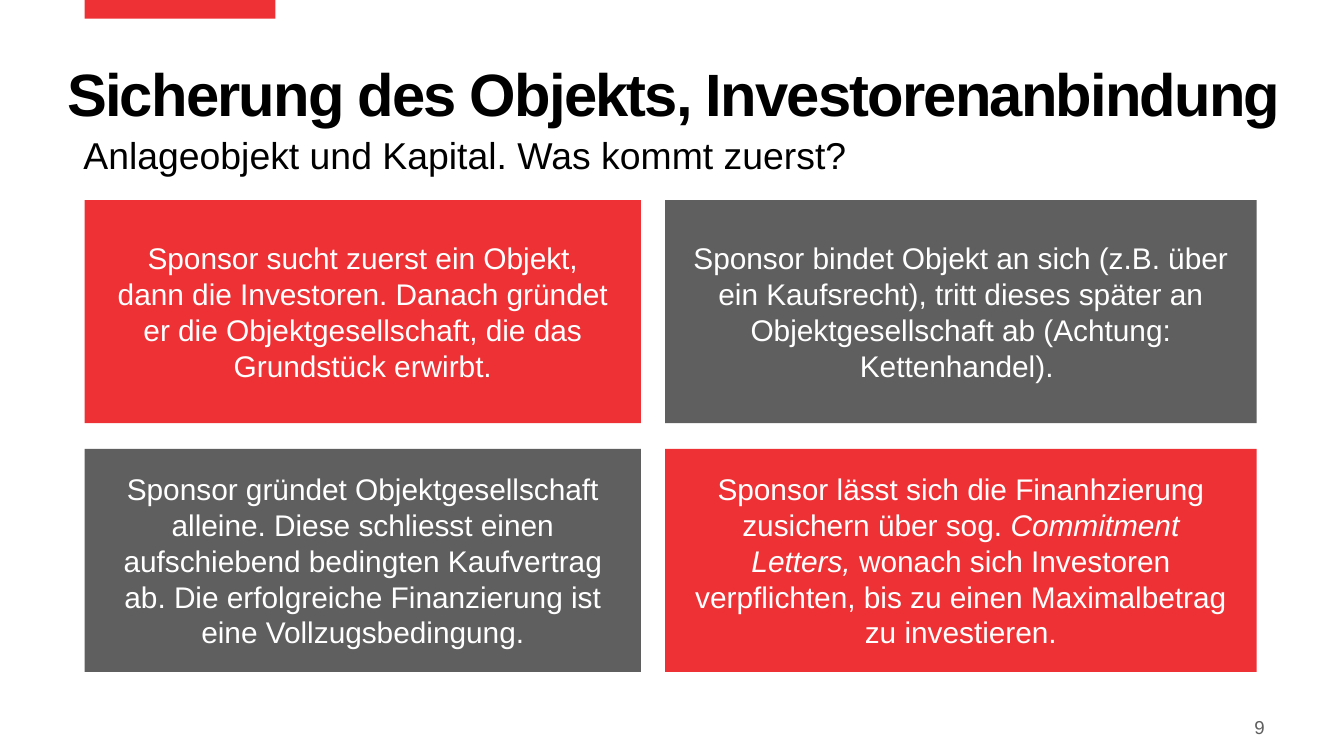
from dataclasses import dataclass

from lxml import etree
from pptx import Presentation, util as u
from pptx.dml.color import RGBColor
from pptx.enum import shapes, text
from pptx.oxml.ns import qn


@dataclass(frozen=True)
class Theme:
    font: str = "Arial"
    red: str = "EE3135"
    grey: str = "5F5F5F"
    black: str = "000000"
    white: str = "FFFFFF"
    title: int = 32
    subtitle: int = 20
    card: int = 16
    number: int = 10


THEME = Theme()
WIDTH = 10
HEIGHT = WIDTH * 9 / 16
COLUMNS = [(0.63, 4.14), (4.95, 4.4)]
ROW_TOP, ROW_HEIGHT, ROW_STEP = 1.49, 1.66, 1.85

CARDS = [
    [
        ["Sponsor sucht zuerst ein Objekt, dann die Investoren. Danach gründet er "
         "die Objektgesellschaft, die das Grundstück erwirbt."],
        ["Sponsor bindet Objekt an sich (z.B. über ein Kaufsrecht), tritt dieses "
         "später an Objektgesellschaft ab (Achtung: Kettenhandel). "],
    ],
    [
        ["Sponsor gründet Objektgesellschaft alleine. Diese schliesst einen "
         "aufschiebend bedingten Kaufvertrag ab. Die erfolgreiche Finanzierung "
         "ist eine Vollzugsbedingung."],
        ["Sponsor lässt sich die Finanhzierung zusichern über sog. ",
         "Commitment Letters, ",
         "wonach sich Investoren verpflichten, bis zu einen Maximalbetrag zu "
         "investieren."],
    ],
]


def write(sp, parts, size, color, bold=False, align=text.PP_ALIGN.LEFT,
          anchor=text.MSO_ANCHOR.TOP, inset=(0, 0), after=0, line=1.0, spacing=0):
    tf = sp.text_frame
    tf.word_wrap = True
    tf.auto_size = text.MSO_AUTO_SIZE.NONE
    tf.vertical_anchor = anchor
    tf.margin_left = tf.margin_right = u.Inches(inset[0])
    tf.margin_top = tf.margin_bottom = u.Inches(inset[1])
    p = tf.paragraphs[0]
    p.alignment = align
    p.line_spacing = line
    p.space_before, p.space_after = u.Pt(0), u.Pt(after)
    for i, part in enumerate(parts):
        r = p.add_run()
        r.text = part
        r.font.name = THEME.font
        r.font.size = u.Pt(size)
        r.font.bold = bold
        r.font.italic = i % 2 == 1
        r.font.color.rgb = RGBColor.from_string(color)
        if spacing:
            r.font._element.set("spc", str(spacing * 100))
    return p


def place(sp, left, top, width, height):
    sp.left, sp.top = u.Inches(left), u.Inches(top)
    sp.width, sp.height = u.Inches(width), u.Inches(height)


def add_block(slide, left, top, width, height, fill):
    sp = slide.shapes.add_shape(shapes.MSO_SHAPE.RECTANGLE,
                                *map(u.Inches, (left, top, width, height)))
    sp.shadow.inherit = False
    sp.fill.solid()
    sp.fill.fore_color.rgb = RGBColor.from_string(fill)
    sp.line.fill.background()
    return sp


def add_headings(slide):
    title, body = slide.shapes.title, slide.placeholders[1]
    place(title, 0.5, 0.48, 9.08, 0.5)
    write(title, ["Sicherung des Objekts, Investorenanbindung"], THEME.title,
          THEME.black, bold=True, line=0.9, spacing=-1)
    place(body, 0.62, 0.98, 8.79, 0.4)
    p = write(body, ["Anlageobjekt und Kapital. Was kommt zuerst?"],
              THEME.subtitle, THEME.black, after=9)
    pPr = p._p.get_or_add_pPr()
    pPr.set("marL", "0")
    pPr.set("indent", "0")
    etree.SubElement(pPr, qn("a:buNone"))


def add_cards(slide):
    for row, cards in enumerate(CARDS):
        for col, parts in enumerate(cards):
            left, width = COLUMNS[col]
            fill = THEME.red if row == col else THEME.grey
            sp = add_block(slide, left, ROW_TOP + row * ROW_STEP, width,
                           ROW_HEIGHT, fill)
            write(sp, parts, THEME.card, THEME.white, after=6, inset=(0.2, 0.08),
                  align=text.PP_ALIGN.CENTER, anchor=text.MSO_ANCHOR.MIDDLE)


def add_page_number(slide):
    sp = slide.shapes.add_textbox(*map(u.Inches, (8.52, 5.3, 0.89, 0.22)))
    write(sp, ["9"], THEME.number, THEME.grey, align=text.PP_ALIGN.RIGHT,
          anchor=text.MSO_ANCHOR.MIDDLE)


def main():
    prs = Presentation()
    prs.slide_width, prs.slide_height = u.Inches(WIDTH), u.Inches(HEIGHT)
    slide = prs.slides.add_slide(prs.slide_layouts[1])
    add_block(slide, COLUMNS[0][0], 0, 1.42, 0.14, THEME.red)
    add_cards(slide)
    add_headings(slide)
    add_page_number(slide)
    prs.save("out.pptx")


if __name__ == "__main__":
    main()
